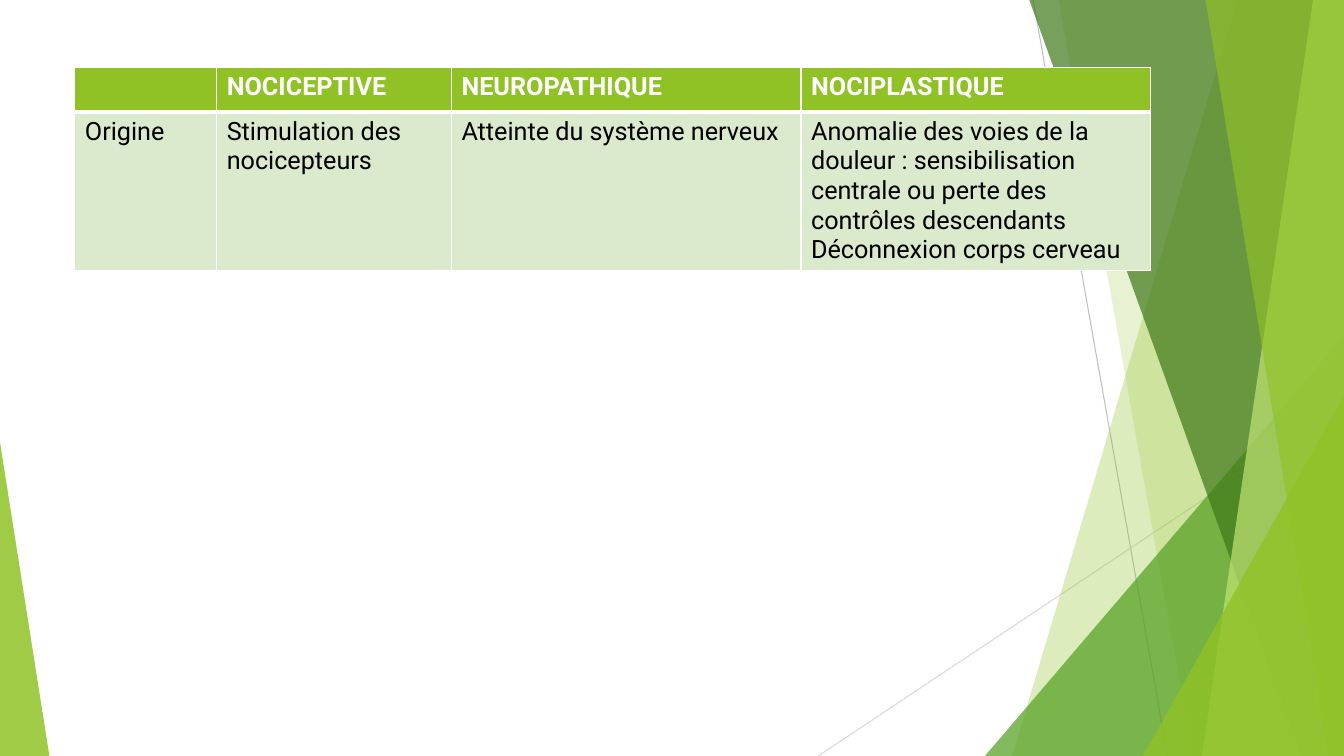
"""Build the slide comparing three kinds of pain, with green facets behind."""
import pptx
import pptx.util
import pptx.oxml
import pptx.oxml.ns
from pptx.dml.color import RGBColor
from pptx.enum.shapes import MSO_CONNECTOR, MSO_SHAPE

Pt = pptx.util.Pt
WIDE, HIGH = 960, 540
RISE = -0.7
FONT, SIZE = "Roboto", 18

WHITE = RGBColor(0xFF, 0xFF, 0xFF)
BLACK = RGBColor(0, 0, 0)
LIME = RGBColor(0x90, 0xC2, 0x26)
GREEN = RGBColor(0x54, 0xA0, 0x21)
DARK = RGBColor(0x3F, 0x78, 0x19)
PALE = RGBColor(0xC0, 0xE4, 0x74)
MINT = RGBColor(0xDB, 0xE9, 0xCD)
GREY = RGBColor(0xBF, 0xBF, 0xBF)
SILVER = RGBColor(0xD9, 0xD9, 0xD9)

ROWS = [
    [[], ["NOCICEPTIVE"], ["NEUROPATHIQUE"], ["NOCIPLASTIQUE"]],
    [["Origine"], ["Stimulation des nocicepteurs"], ["Atteinte du système nerveux"],
     ["Anomalie des voies de la douleur : sensibilisation centrale ou perte des "
      "contrôles descendants", "Déconnexion corps cerveau"]],
]
LEFT, TOP = 53.5, 48
COLS = [101.3, 167.7, 249.7, 249.7]
TALL = [32, 113]
STYLES = [(LIME, WHITE, True, 1, 3), (MINT, BLACK, False, 3, 1)]

LINES = [((738, 0), (834, HIGH), GREY), ((WIDE, 290), (584.5, HIGH), SILVER)]
FACETS = [
    ("band", 884, 723, LIME, 30),
    ("band", 756, 852, LIME, 20),
    ("peak", 703.5, 240, WIDE, 1, GREEN, 72),
    ("band", 735, 929.5, DARK, 70),
    ("band", 938, 858.5, PALE, 70),
    ("band", 861, 949, LIME, 65),
    ("peak", 816.5, 283, WIDE, 1, LIME, 80),
    ("peak", 0, 316, 35.3, 0, LIME, 85),
]


def paint(shape, color, alpha):
    """Give a shape a see-through fill with no line or shadow."""
    shape.shadow.inherit = False
    shape.line.fill.background()
    shape.fill.solid()
    shape.fill.fore_color.rgb = color
    tone = shape.fill._xPr.find(".//" + pptx.oxml.ns.qn("a:srgbClr"))
    tone.append(pptx.oxml.parse_xml(
        f'<a:alpha {pptx.oxml.ns.nsdecls("a")} val="{alpha * 1000}"/>'))


def draw_line(shapes, start, end, color):
    """Draw one thin straight line."""
    line = shapes.add_connector(
        MSO_CONNECTOR.STRAIGHT, *(Pt(n) for n in start + end))
    line.line.color.rgb = color
    line.line.width = Pt(0.75)
    line._element.spPr.append(pptx.oxml.parse_xml(
        f'<a:effectLst {pptx.oxml.ns.nsdecls("a")}/>'))


def draw_band(shapes, top, foot, color, alpha):
    """Draw a facet reaching from a slanted left edge to the slide's right."""
    spots = [(top, RISE), (WIDE, RISE), (WIDE, HIGH), (foot, HIGH)]
    spots = [(Pt(x), Pt(y)) for x, y in spots]
    pen = shapes.build_freeform(*spots[0])
    pen.add_line_segments(spots[1:], close=True)
    paint(pen.convert_to_shape(), color, alpha)


def draw_peak(shapes, left, top, right, apex, color, alpha):
    """Draw a right triangle standing on the slide's lower edge."""
    peak = shapes.add_shape(
        MSO_SHAPE.ISOSCELES_TRIANGLE,
        Pt(left), Pt(top), Pt(right - left), Pt(HIGH - top))
    peak.adjustments[0] = apex
    paint(peak, color, alpha)


def edge(cell, upper, lower):
    """Rule the four sides of a cell in white."""
    props = cell._tc.get_or_add_tcPr()
    for spot, (side, width) in enumerate(zip("LRTB", (1, 1, upper, lower))):
        props.insert(spot, pptx.oxml.parse_xml(
            f'<a:ln{side} {pptx.oxml.ns.nsdecls("a")} w="{Pt(width)}">'
            f'<a:solidFill><a:srgbClr val="{WHITE}"/></a:solidFill></a:ln{side}>'))


def fill_cell(cell, paras, style):
    """Style a cell and write its paragraphs."""
    back, ink, bold, upper, lower = style
    cell.fill.solid()
    cell.fill.fore_color.rgb = back
    edge(cell, upper, lower)
    frame = cell.text_frame
    for spot, text in enumerate(paras):
        para = frame.add_paragraph() if spot else frame.paragraphs[0]
        run = para.add_run()
        run.text = text
        run.font.name = FONT
        run.font.size = Pt(SIZE)
        run.font.bold = bold
        run.font.color.rgb = ink


def draw_table(shapes):
    """Add the comparison table."""
    table = shapes.add_table(
        len(ROWS), len(COLS), Pt(LEFT), Pt(TOP), Pt(sum(COLS)), Pt(sum(TALL))).table
    for col, width in zip(table.columns, COLS):
        col.width = Pt(width)
    for row, height, texts, style in zip(table.rows, TALL, ROWS, STYLES):
        row.height = Pt(height)
        for cell, paras in zip(row.cells, texts):
            fill_cell(cell, paras, style)


def main():
    """Build and save the deck."""
    deck = pptx.Presentation()
    deck.slide_width, deck.slide_height = Pt(WIDE), Pt(HIGH)
    shapes = deck.slides.add_slide(deck.slide_layouts[6]).shapes
    for line in LINES:
        draw_line(shapes, *line)
    tools = {"band": draw_band, "peak": draw_peak}
    for kind, *facet in FACETS:
        tools[kind](shapes, *facet)
    draw_table(shapes)
    deck.save("out.pptx")


if __name__ == "__main__":
    main()
